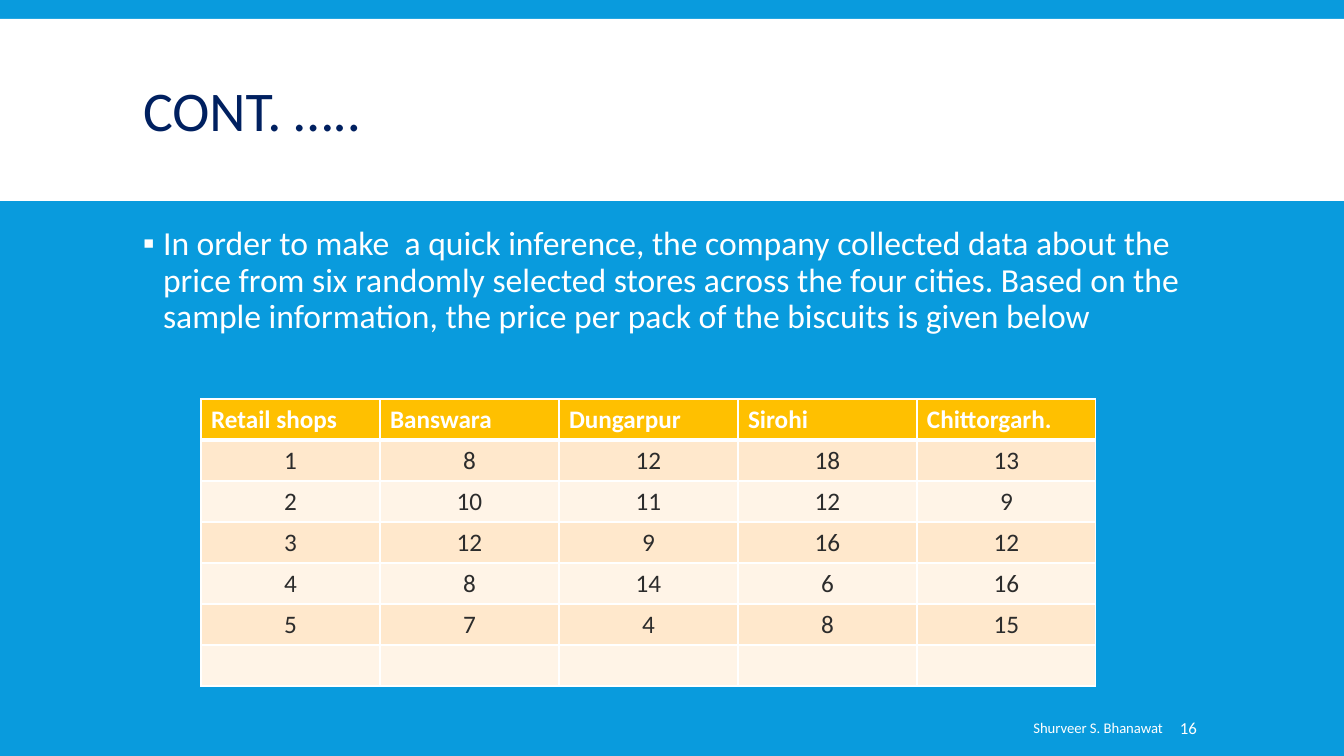
from lxml import etree
from pptx import Presentation
from pptx import util as u
from pptx.dml.color import RGBColor
from pptx.enum import shapes, text
from pptx.oxml import ns

TITLE = "CONT. ….."
BODY = ("In order to make  a quick inference, the company collected data about the "
        "price from six randomly selected stores across the four cities. Based on the "
        "sample information, the price per pack of the biscuits is given below")
HEAD = ["Retail shops", "Banswara", "Dungarpur", "Sirohi", "Chittorgarh."]
PRICES = [
    (1, 8, 12, 18, 13),
    (2, 10, 11, 12, 9),
    (3, 12, 9, 16, 12),
    (4, 8, 14, 6, 16),
    (5, 7, 4, 8, 15),
    ("", "", "", "", ""),
]
AUTHOR = "Shurveer S. Bhanawat"
NUMBER = "16"
FONT = "Calibri"
COLORS = {"sky": "099BDD", "white": "FFFFFF", "navy": "002060", "gold": "FFC000",
          "ink": "2C2C2C", "peach": "FFE8CC", "cream": "FFF4E7"}
COL, ROW = 179, 41
ALIGN, ANCHOR = text.PP_ALIGN, text.MSO_ANCHOR


def px(n):
    return u.Emu(round(n * 914400 / 100.8))


def rgb(name):
    return RGBColor.from_string(COLORS[name])


def paint(fill, name):
    fill.solid()
    fill.fore_color.rgb = rgb(name)


def write(frame, words, size, color, align=ALIGN.LEFT, bold=False):
    para = frame.paragraphs[0]
    para.text = str(words)
    para.alignment = align
    font = para.font
    font.name, font.size, font.bold = FONT, u.Pt(size), bold
    font.color.rgb = rgb(color)
    return para


def add_box(slide, box, anchor=ANCHOR.MIDDLE):
    frame = slide.shapes.add_textbox(*map(px, box)).text_frame
    frame.word_wrap = True
    frame.vertical_anchor = anchor
    return frame


def add_bullet(para, mark):
    props = para._p.get_or_add_pPr()
    props.set("marL", str(u.Inches(0.2)))
    props.set("indent", str(-u.Inches(0.2)))
    etree.SubElement(props, ns.qn("a:buFont")).set("typeface", "Arial")
    etree.SubElement(props, ns.qn("a:buChar")).set("char", mark)


def add_edges(cell, top, bottom):
    props = cell._tc.get_or_add_tcPr()
    for side, width in (("L", 1), ("R", 1), ("T", top), ("B", bottom)):
        line = etree.SubElement(props, ns.qn("a:ln" + side), w=str(u.Pt(width)))
        fill = etree.SubElement(line, ns.qn("a:solidFill"))
        etree.SubElement(fill, ns.qn("a:srgbClr"), val=COLORS["white"])


def add_prices(slide):
    rows = [HEAD] + PRICES
    size = px(COL * len(HEAD)), px(ROW * len(rows))
    table = slide.shapes.add_table(len(rows), len(HEAD), px(201), px(399), *size).table
    for col in table.columns:
        col.width = px(COL)
    for r, row in enumerate(rows):
        table.rows[r].height = px(ROW)
        for c, value in enumerate(row):
            cell = table.cell(r, c)
            add_edges(cell, 3 if r == 1 else 1, 3 if r == 0 else 1)
            if r == 0:
                paint(cell.fill, "gold")
                write(cell.text_frame, value, 18, "white", bold=True)
            else:
                paint(cell.fill, "peach" if r % 2 else "cream")
                write(cell.text_frame, value, 18, "ink", ALIGN.CENTER)


def main():
    deck = Presentation()
    deck.slide_width, deck.slide_height = px(1344), px(756)
    slide = deck.slides.add_slide(deck.slide_layouts[5])
    paint(slide.background.fill, "sky")

    band = slide.shapes.add_shape(shapes.MSO_SHAPE.RECTANGLE, *map(px, (0, 19, 1344, 182)))
    band.shadow.inherit = False
    paint(band.fill, "white")
    band.line.fill.background()
    slide.shapes._spTree.insert(2, band._element)

    title = slide.shapes.title
    title.left, title.top, title.width, title.height = map(px, (133, 31, 1079, 166))
    title.text_frame.vertical_anchor = ANCHOR.MIDDLE
    write(title.text_frame, TITLE, 40, "navy").line_spacing = 0.85

    body = add_box(slide, (133, 222, 1079, 160), ANCHOR.TOP)
    add_bullet(body.paragraphs[0], "▪")
    write(body, BODY, 24, "white").line_spacing = 0.9

    add_prices(slide)

    write(add_box(slide, (617, 708, 556, 40)), AUTHOR, 10.5, "white", ALIGN.RIGHT)
    page = add_box(slide, (1175, 708, 104, 40))
    page.margin_left = px(5)
    write(page, NUMBER, 12, "white")

    deck.save("out.pptx")


if __name__ == "__main__":
    main()
